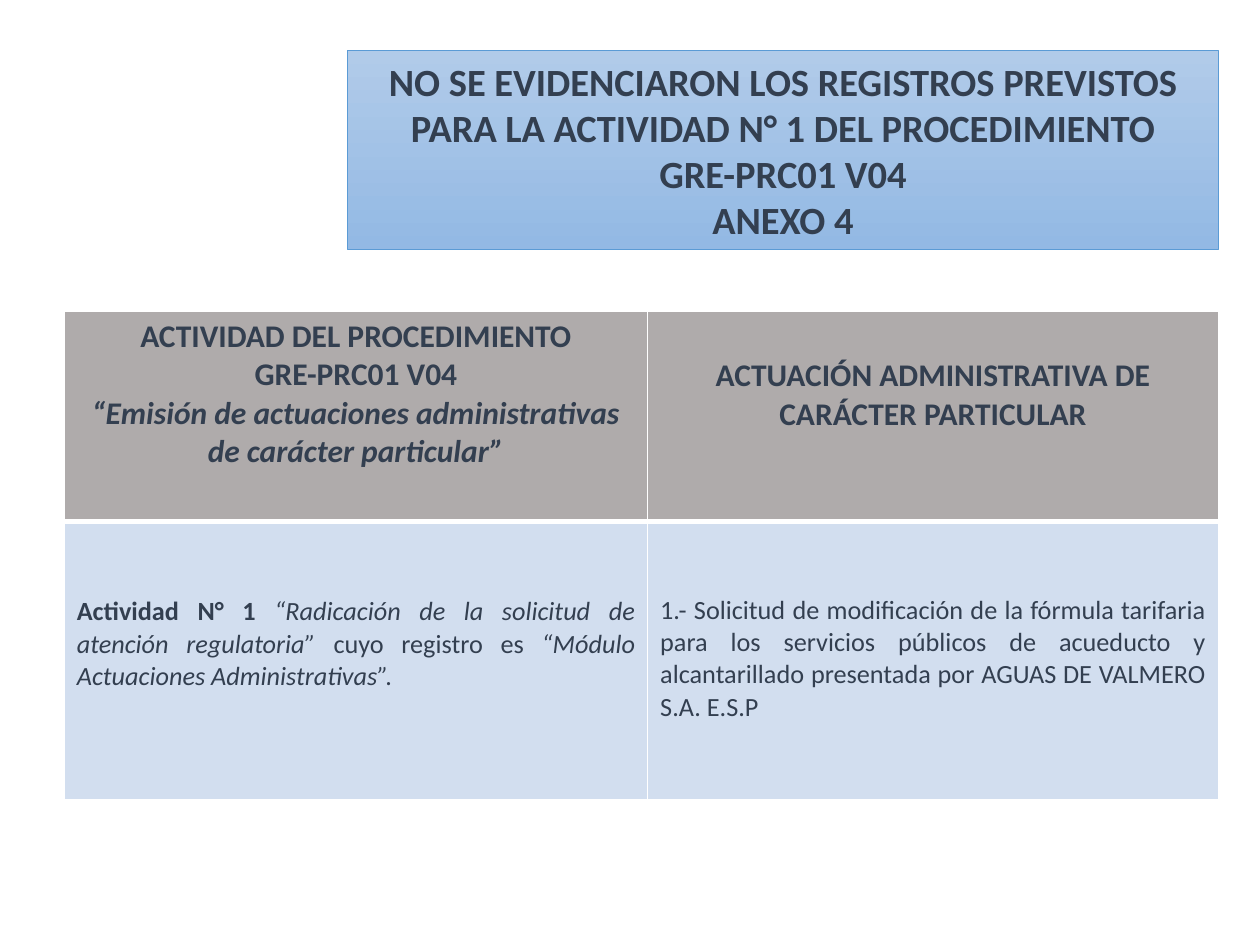
from lxml import etree
from pptx import Presentation
from pptx.dml.color import RGBColor
from pptx.enum.text import MSO_ANCHOR as ANCHOR, MSO_AUTO_SIZE as AUTO, PP_ALIGN as ALIGN
from pptx.oxml.ns import qn
from pptx.util import Inches, Pt

COLORS = {
    "text": "333F50", "grad_top": "B1CBE9", "grad_bottom": "93B9E4",
    "outline": "5B9BD5", "header": "AFABAB", "body": "D2DEEF", "border": "FFFFFF",
}


def rgb(name):
    return RGBColor.from_string(COLORS[name])


class SlideBuilder:
    font = "Calibri"

    def __init__(self, slide):
        self.slide = slide

    def add_text(self, tf, paragraphs, size, align):
        """Each paragraph is a list of (text, bold, italic) runs."""
        for i, runs in enumerate(paragraphs):
            p = tf.paragraphs[0] if i == 0 else tf.add_paragraph()
            p.alignment = align
            for text, bold, italic in runs:
                r = p.add_run()
                r.text = text
                r.font.name, r.font.size = self.font, Pt(size)
                r.font.bold, r.font.italic = bold, italic
                r.font.color.rgb = rgb("text")

    def title(self, x, y, w, h, paragraphs, size):
        s = self.slide.shapes.title
        s.left, s.top, s.width, s.height = (Inches(v) for v in (x, y, w, h))
        s.fill.gradient()
        s.fill.gradient_angle = 270
        for i, name in enumerate(("grad_top", "grad_bottom")):
            stop = s.fill.gradient_stops[i]
            stop.color.rgb = rgb(name)
            stop.position = i
        s.line.color.rgb = rgb("outline")
        s.line.width = Pt(0.5)
        tf = s.text_frame
        tf.word_wrap, tf.auto_size = True, AUTO.NONE
        tf.vertical_anchor = ANCHOR.MIDDLE
        self.add_text(tf, paragraphs, size, ALIGN.CENTER)

    def borders(self, cell, widths):
        tc_pr = cell._tc.get_or_add_tcPr()
        for side, width in zip("LRTB", widths):
            ln = etree.SubElement(tc_pr, qn(f"a:ln{side}"), w=str(Pt(width)))
            fill = etree.SubElement(ln, qn("a:solidFill"))
            etree.SubElement(fill, qn("a:srgbClr"), val=COLORS["border"])

    def cell(self, cell, paragraphs, size, align, fill, top, widths):
        self.borders(cell, widths)
        cell.fill.solid()
        cell.fill.fore_color.rgb = rgb(fill)
        cell.vertical_anchor = ANCHOR.TOP
        cell.margin_top = Inches(top)
        self.add_text(cell.text_frame, paragraphs, size, align)

    def table(self, x, y, cols, rows, styles, content):
        frame = self.slide.shapes.add_table(
            len(rows), len(cols), Inches(x), Inches(y), Inches(sum(cols)), Inches(sum(rows)))
        table = frame.table
        for column, width in zip(table.columns, cols):
            column.width = Inches(width)
        for row, height, style, cells in zip(table.rows, rows, styles, content):
            row.height = Inches(height)
            for cell, (top, paragraphs) in zip(row.cells, cells):
                self.cell(cell, paragraphs, top=top, **style)


def main():
    prs = Presentation()
    prs.slide_width, prs.slide_height = Inches(10), Inches(7.5)
    b = SlideBuilder(prs.slides.add_slide(prs.slide_layouts[5]))

    # Title banner
    b.title(2.76, 0.4, 6.91, 1.58, [
        [("NO SE EVIDENCIARON LOS REGISTROS PREVISTOS PARA LA ACTIVIDAD N° 1 DEL PROCEDIMIENTO",
          True, False)],
        [("GRE-PRC01 V04", True, False)],
        [("ANEXO 4", True, False)],
    ], 22)

    # Table: one style per row, each cell with its top margin and text
    styles = [
        dict(size=18, align=ALIGN.CENTER, fill="header", widths=(1, 1, 1, 3)),
        dict(size=15, align=ALIGN.JUSTIFY, fill="body", widths=(1, 1, 3, 1)),
    ]
    header = [
        (0.05, [
            [("ACTIVIDAD DEL PROCEDIMIENTO", True, False)],
            [("GRE-PRC01 V04", True, False)],
            [("“Emisión de actuaciones administrativas de carácter particular”", True, True)],
        ]),
        (0.36, [[("ACTUACIÓN ADMINISTRATIVA DE CARÁCTER PARTICULAR", True, False)]]),
    ]
    body = [
        (0.59, [[
            ("Actividad N° 1 ", True, False),
            ("“Radicación de la solicitud de atención regulatoria” ", False, True),
            ("cuyo registro es ", False, False),
            ("“Módulo Actuaciones Administrativas”.", False, True),
        ]]),
        (0.58, [[
            ("1.- Solicitud de modificación de la fórmula tarifaria para los servicios públicos "
             "de acueducto y alcantarillado presentada por AGUAS DE VALMERO S.A. E.S.P",
             False, False),
        ]]),
    ]
    b.table(0.51, 2.47, (4.63, 4.53), (1.67, 2.21), styles, (header, body))

    prs.save("out.pptx")


if __name__ == "__main__":
    main()
